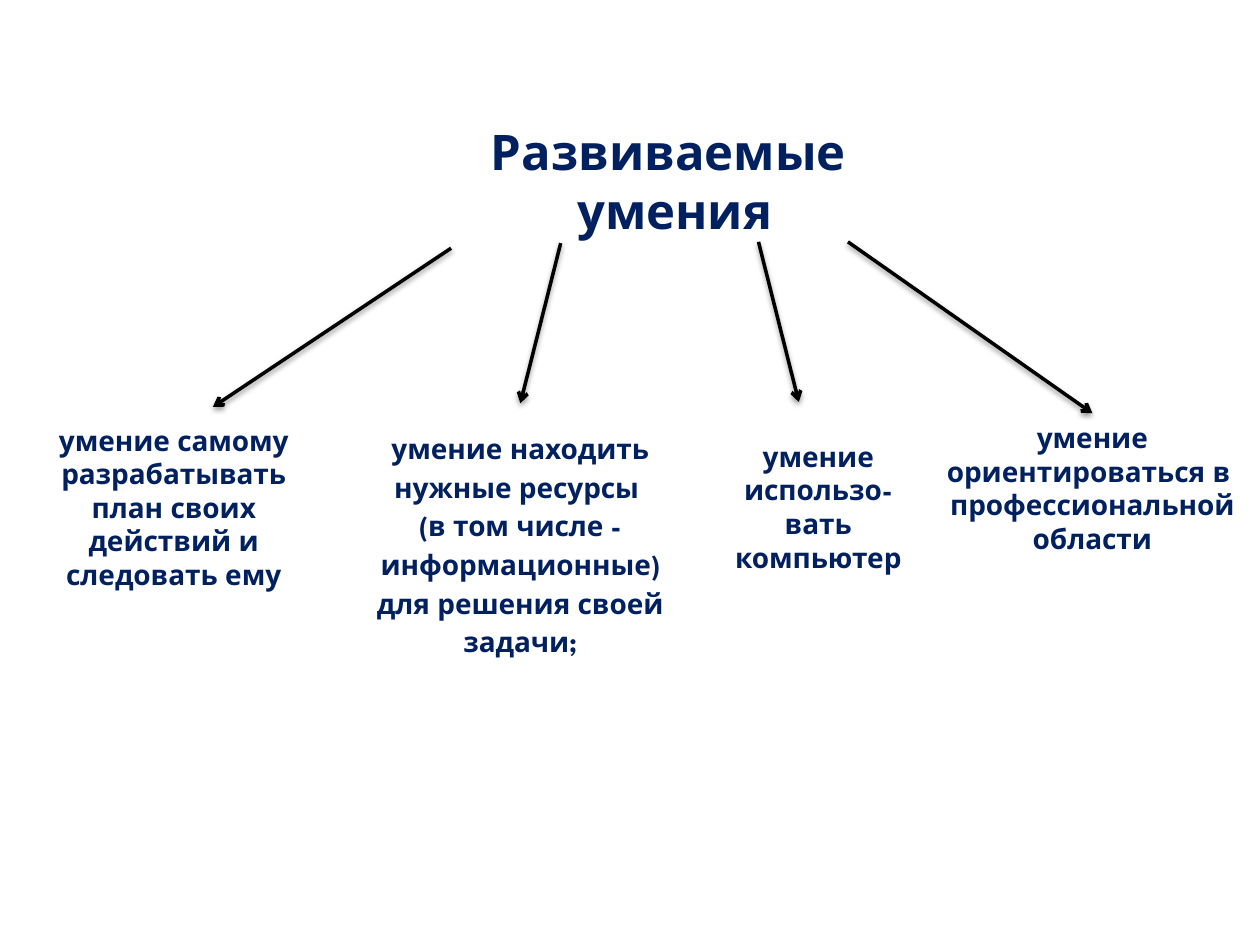
import pptx
import pptx.dml.color
import pptx.enum.shapes
import pptx.enum.text
import pptx.oxml
import pptx.oxml.ns
import pptx.util
from pptx.util import Inches

FONT = "League Spartan"
NAVY = "002060"
WHITE = "FFFFFF"
BLACK = "000000"

SKILLS = [
    ((0.2, 3.2, 2.36, 1.65), 1.0,
     ["умение самому разрабатывать план своих действий и следовать ему"]),
    ((2.87, 3.2, 2.52, 2.21), 1.15,
     ["умение находить нужные ресурсы ",
      "(в том числе - информационные) для решения своей задачи;"]),
    ((5.71, 3.39, 1.57, 1.26), 1.0,
     ["умение использо-", "вать компьютер"]),
    ((7.34, 3.28, 2.66, 1.18), 1.0,
     ["умение ориентироваться в  профессиональной области"]),
]

ARROWS = [
    (3.58, 1.97, 1.69, 3.23),
    (4.45, 1.93, 4.13, 3.2),
    (6.02, 1.92, 6.34, 3.19),
    (6.73, 1.92, 8.67, 3.28),
]


def color(code):
    return pptx.dml.color.RGBColor.from_string(code)


def style(shape, lines, size, gap=1.0):
    shape.fill.solid()
    shape.fill.fore_color.rgb = color(WHITE)
    shape.line.color.rgb = color(WHITE)
    shape.line.width = pptx.util.Pt(2)
    frame = shape.text_frame
    frame.text = "\n".join(lines)
    frame.word_wrap = True
    frame.auto_size = pptx.enum.text.MSO_AUTO_SIZE.NONE
    frame.vertical_anchor = pptx.enum.text.MSO_ANCHOR.MIDDLE
    for para in frame.paragraphs:
        para.alignment = pptx.enum.text.PP_ALIGN.CENTER
        para.line_spacing = gap
        para.font.name = FONT
        para.font.size = pptx.util.Pt(size)
        para.font.bold = True
        para.font.color.rgb = color(NAVY)


def add_title(slide, text):
    title = slide.shapes.title
    title.left, title.top = Inches(3.58), Inches(0.93)
    title.width, title.height = Inches(3.55), Inches(1)
    style(title, [text], 28)


def add_skill(slide, box, gap, lines):
    kind = pptx.enum.shapes.MSO_SHAPE.RECTANGLE
    shape = slide.shapes.add_shape(kind, *map(Inches, box))
    shape.shadow.inherit = False
    style(shape, lines, 16, gap)


def add_arrow(slide, ends):
    kind = pptx.enum.shapes.MSO_CONNECTOR.STRAIGHT
    arrow = slide.shapes.add_connector(kind, *map(Inches, ends))
    arrow.line.color.rgb = color(BLACK)
    arrow.line.width = pptx.util.Pt(2)
    space = pptx.oxml.ns.nsdecls("a")
    props = arrow._element.spPr
    head = pptx.oxml.parse_xml(f'<a:tailEnd {space} type="arrow"/>')
    props.find(pptx.oxml.ns.qn("a:ln")).append(head)
    props.append(pptx.oxml.parse_xml(
        f'<a:effectLst {space}>'
        '<a:outerShdw blurRad="40000" dist="20000" dir="5400000" rotWithShape="0">'
        f'<a:srgbClr val="{BLACK}"><a:alpha val="38000"/></a:srgbClr>'
        '</a:outerShdw></a:effectLst>'))


def main():
    deck = pptx.Presentation()
    deck.slide_width, deck.slide_height = Inches(10), Inches(7.5)
    slide = deck.slides.add_slide(deck.slide_layouts.get_by_name("Title Only"))
    add_title(slide, "Развиваемые  умения")
    for box, gap, lines in SKILLS:
        add_skill(slide, box, gap, lines)
    for ends in ARROWS:
        add_arrow(slide, ends)
    deck.save("out.pptx")


if __name__ == "__main__":
    main()
